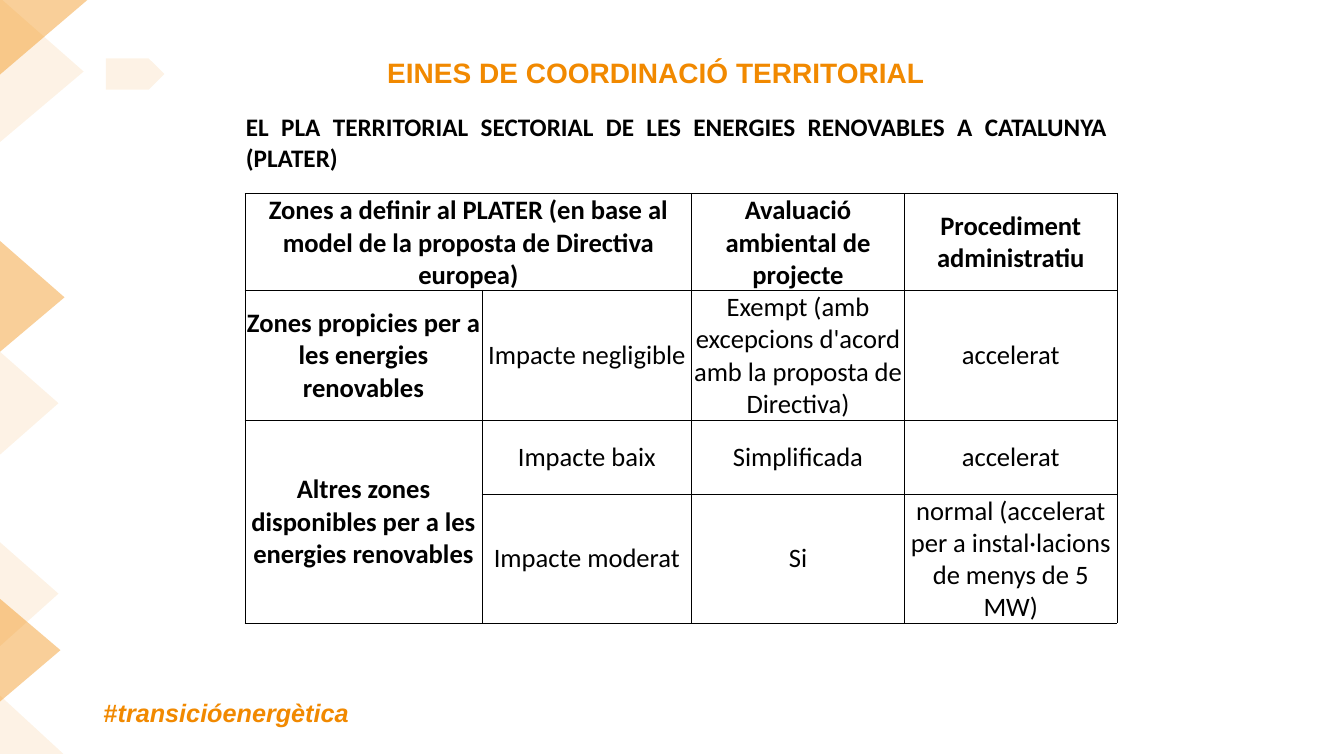
from dataclasses import dataclass

from lxml.etree import SubElement
from pptx import Presentation
from pptx.dml.color import RGBColor
from pptx.enum.shapes import MSO_SHAPE as Preset
from pptx.enum.text import MSO_ANCHOR as Anchor, PP_ALIGN as Align
from pptx.oxml.ns import qn
from pptx.shapes.autoshape import Shape
from pptx.slide import Slide
from pptx.table import _Cell as Cell
from pptx.text.text import _Paragraph as Paragraph
from pptx.util import Inches, Pt


@dataclass(frozen=True)
class Theme:
    orange: str = "F18900"
    black: str = "000000"
    heading_font: str = "Arial"
    body_font: str = "Calibri"
    title_size: int = 20
    text_size: int = 18
    table_size: int = 19
    border_width: float = 0.5
    strong_alpha: int = 40
    pale_alpha: int = 10


@dataclass(frozen=True)
class Span:
    text: str
    font: str
    size: int
    color: str
    bold: bool = True
    italic: bool = False


@dataclass(frozen=True)
class Label:
    left: float
    top: float
    width: float
    height: float
    align: Align
    spans: tuple[Span, ...]


@dataclass(frozen=True)
class Facet:
    points: tuple[tuple[float, float], ...]
    alpha: int


@dataclass(frozen=True)
class Accent:
    preset: Preset
    left: float
    top: float
    width: float
    height: float


@dataclass(frozen=True)
class Entry:
    row: int
    column: int
    text: str
    bold: bool = False
    row_span: int = 1
    column_span: int = 1


THEME = Theme()


def arrow(top: float, tip: float, middle: float, bottom: float, alpha: int) -> Facet:
    return Facet(((0, top), (tip, middle), (0, bottom)), alpha)


FACETS = (
    arrow(5.94, 0.6, 6.45, 6.96, THEME.strong_alpha),
    arrow(3.49, 0.58, 4, 4.51, THEME.pale_alpha),
    arrow(2.39, 0.64, 2.95, 3.49, THEME.strong_alpha),
    arrow(-0.02, 0.83, 0.71, 1.41, THEME.pale_alpha),
    arrow(-0.02, 0.89, -0.02, 0.74, THEME.strong_alpha),
    arrow(5.38, 0.58, 5.89, 6.41, THEME.pale_alpha),
)

ACCENTS = (
    Accent(Preset.PENTAGON, 1.05, 0.58, 0.58, 0.31),
    Accent(Preset.RIGHT_TRIANGLE, 0, 6.9, 0.63, 0.58),
)

LABELS = (
    Label(0.93, 6.87, 3.74, 0.4, Align.LEFT, (
        Span("#", THEME.heading_font, THEME.text_size, THEME.orange),
        Span("transicióenergètica", THEME.heading_font, THEME.text_size, THEME.orange, italic=True),
    )),
    Label(2.34, 1.06, 8.74, 0.71, Align.JUSTIFY, (
        Span("EL PLA TERRITORIAL SECTORIAL DE LES ENERGIES RENOVABLES A CATALUNYA (PLATER)",
             THEME.body_font, THEME.text_size, THEME.black),
    )),
    Label(2.34, 0.5, 8.33, 0.64, Align.CENTER, (
        Span("EINES DE COORDINACIÓ TERRITORIAL", THEME.heading_font, THEME.title_size, THEME.orange),
    )),
)

COLUMN_WIDTHS = (2.35, 2.08, 2.11, 2.11)
ROW_HEIGHTS = (0.96, 1.29, 0.73, 1.28)
ENTRIES = (
    Entry(0, 0, "Zones a definir al PLATER (en base al model de la proposta de Directiva europea)",
          bold=True, column_span=2),
    Entry(0, 2, "Avaluació ambiental de projecte", bold=True),
    Entry(0, 3, "Procediment administratiu", bold=True),
    Entry(1, 0, "Zones propicies per a les energies renovables", bold=True),
    Entry(1, 1, "Impacte negligible"),
    Entry(1, 2, "Exempt (amb excepcions d'acord amb la proposta de Directiva)"),
    Entry(1, 3, "accelerat"),
    Entry(2, 0, "Altres zones disponibles per a les energies renovables", bold=True, row_span=2),
    Entry(2, 1, "Impacte baix"),
    Entry(2, 2, "Simplificada"),
    Entry(2, 3, "accelerat"),
    Entry(3, 1, "Impacte moderat"),
    Entry(3, 2, "Si"),
    Entry(3, 3, "normal (accelerat per a instal·lacions de menys de 5 MW)"),
)


def tint(shape: Shape, alpha: int) -> None:
    shape.shadow.inherit = False
    shape.line.fill.background()
    shape.fill.solid()
    shape.fill.fore_color.rgb = RGBColor.from_string(THEME.orange)
    color = shape.element.spPr.find(f".//{qn('a:srgbClr')}")
    SubElement(color, qn("a:alpha"), val=str(alpha * 1000))


def draw_facet(page: Slide, facet: Facet) -> None:
    start, *others = [(Inches(x), Inches(y)) for x, y in facet.points]
    builder = page.shapes.build_freeform(*start)
    builder.add_line_segments(others, close=True)
    tint(builder.convert_to_shape(), facet.alpha)


def draw_accent(page: Slide, accent: Accent) -> None:
    shape = page.shapes.add_shape(accent.preset, Inches(accent.left), Inches(accent.top),
                                  Inches(accent.width), Inches(accent.height))
    tint(shape, THEME.pale_alpha)


def add_span(para: Paragraph, span: Span) -> None:
    run = para.add_run()
    run.text = span.text
    run.font.name = span.font
    run.font.size = Pt(span.size)
    run.font.bold = span.bold
    run.font.italic = span.italic
    run.font.color.rgb = RGBColor.from_string(span.color)


def draw_label(page: Slide, label: Label) -> None:
    box = page.shapes.add_textbox(Inches(label.left), Inches(label.top),
                                  Inches(label.width), Inches(label.height))
    box.text_frame.word_wrap = True
    para = box.text_frame.paragraphs[0]
    para.alignment = label.align
    for span in label.spans:
        add_span(para, span)


def style_cell(cell: Cell) -> None:
    cell.margin_left = cell.margin_right = cell.margin_top = Inches(0.01)
    cell.margin_bottom = 0
    cell.vertical_anchor = Anchor.MIDDLE
    properties = cell._tc.get_or_add_tcPr()
    for side in ("a:lnL", "a:lnR", "a:lnT", "a:lnB"):
        border = SubElement(properties, qn(side), w=str(Pt(THEME.border_width)))
        SubElement(SubElement(border, qn("a:solidFill")), qn("a:srgbClr"), val=THEME.black)
    cell.fill.background()


def draw_table(page: Slide) -> None:
    frame = page.shapes.add_table(len(ROW_HEIGHTS), len(COLUMN_WIDTHS), Inches(2.43), Inches(1.92),
                                  Inches(sum(COLUMN_WIDTHS)), Inches(sum(ROW_HEIGHTS)))
    table = frame.table
    table.first_row = table.horz_banding = False
    for column, width in zip(table.columns, COLUMN_WIDTHS):
        column.width = Inches(width)
    for row, height in zip(table.rows, ROW_HEIGHTS):
        row.height = Inches(height)
    for cell in table.iter_cells():
        style_cell(cell)
    for entry in ENTRIES:
        cell = table.cell(entry.row, entry.column)
        if entry.row_span * entry.column_span > 1:
            cell.merge(table.cell(entry.row + entry.row_span - 1, entry.column + entry.column_span - 1))
        para = cell.text_frame.paragraphs[0]
        para.alignment = Align.CENTER
        add_span(para, Span(entry.text, THEME.body_font, THEME.table_size, THEME.black, entry.bold))


def main() -> None:
    deck = Presentation()
    deck.slide_width, deck.slide_height = Inches(13.33), Inches(7.5)
    page = deck.slides.add_slide(deck.slide_layouts[6])
    for facet in FACETS:
        draw_facet(page, facet)
    for accent in ACCENTS:
        draw_accent(page, accent)
    for label in LABELS:
        draw_label(page, label)
    draw_table(page)
    deck.save("out.pptx")


if __name__ == "__main__":
    main()
